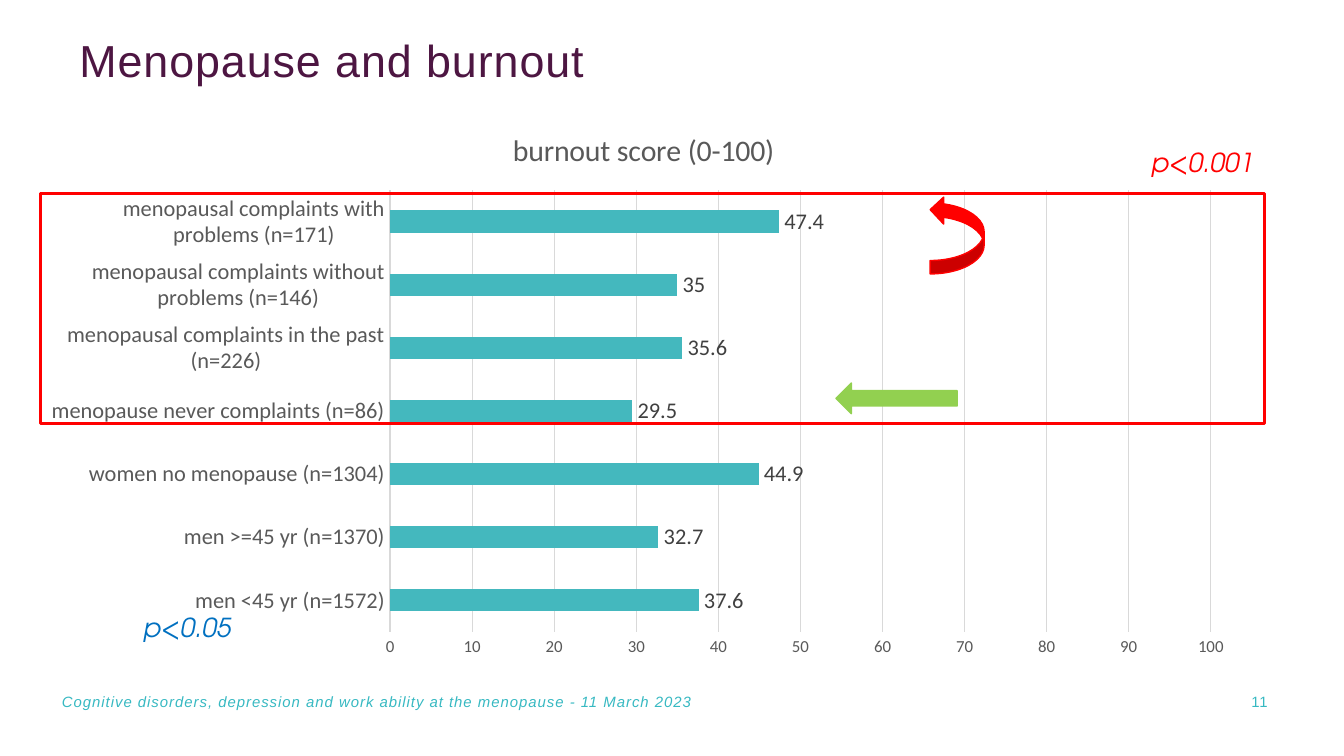
from lxml.etree import SubElement
from pptx import Presentation
from pptx.chart.data import CategoryChartData
from pptx.dml.color import RGBColor
from pptx.enum.chart import XL_CHART_TYPE as ChartType, XL_LABEL_POSITION as LabelPosition
from pptx.enum.chart import XL_TICK_MARK as TickMark
from pptx.enum.shapes import MSO_SHAPE as Shape
from pptx.enum.text import MSO_ANCHOR as Anchor, MSO_AUTO_SIZE as AutoSize, PP_ALIGN as Align
from pptx.oxml import parse_xml
from pptx.oxml.ns import nsdecls, qn
from pptx.util import Cm, Pt

PLUM = RGBColor(0x4D, 0x16, 0x42)
TEAL = RGBColor(0x37, 0xB9, 0xC2)
BAR_TEAL = RGBColor(0x44, 0xB8, 0xBE)
RED = RGBColor(0xFF, 0x00, 0x00)
GREEN = RGBColor(0x92, 0xD0, 0x50)
BLUE = RGBColor(0x00, 0x70, 0xC0)
GREY = RGBColor(0x59, 0x59, 0x59)
DARK_GREY = RGBColor(0x40, 0x40, 0x40)
GRID_GREY = RGBColor(0xD9, 0xD9, 0xD9)
BLACK = RGBColor(0x00, 0x00, 0x00)

TEXT_FONT = "Arial"
CHART_FONT = "Calibri"
P_VALUE_FONT = "TeX Gyre Adventor"

SCORE_NAME = "burnout score (0-100)"
SCORES = {
    "men <45 yr (n=1572)": 37.6,
    "men >=45 yr (n=1370)": 32.7,
    "women no menopause (n=1304)": 44.9,
    "menopause never complaints (n=86)": 29.5,
    "menopausal complaints in the past (n=226)": 35.6,
    "menopausal complaints without problems (n=146)": 35,
    "menopausal complaints with problems (n=171)": 47.4,
}


def set_font(font, name, size, color, italic=False):
    font.name = name
    font.size = Pt(size)
    font.color.rgb = color
    font.bold = False
    font.italic = italic


def set_line(line, color, width):
    line.color.rgb = color
    line.width = Pt(width)


class SlideBuilder:
    """Holds the current page and adds styled elements to it; lengths are in cm."""

    def __init__(self, page):
        self.page = page

    def add_span(self, frame, text, font, size, color, italic=False, spacing=0):
        """Add one run to the first paragraph; spacing is in hundredths of a point."""
        para = frame.paragraphs[0]
        span = para.add_run()
        span.text = text
        set_font(span.font, font, size, color, italic)
        if spacing:
            span.font._element.set("spc", str(spacing))
        return para

    def clear_insets(self, frame):
        frame.margin_left = frame.margin_right = frame.margin_top = frame.margin_bottom = 0

    def title(self, text, left, top, width, height):
        box = self.page.shapes.title
        box.left, box.top, box.width, box.height = Cm(left), Cm(top), Cm(width), Cm(height)
        frame = box.text_frame
        self.clear_insets(frame)
        frame.auto_size = AutoSize.NONE
        frame.vertical_anchor = Anchor.TOP
        para = self.add_span(frame, text, TEXT_FONT, 24, PLUM, spacing=50)
        para.alignment = Align.LEFT
        para.line_spacing = 0.8

    def text_frame(self, left, top, width, height):
        box = self.page.shapes.add_textbox(Cm(left), Cm(top), Cm(width), Cm(height))
        box.text_frame.word_wrap = True
        return box.text_frame

    def p_value(self, text, color, left, top):
        frame = self.text_frame(left, top, 2.72, 0.86)
        frame.auto_size = AutoSize.SHAPE_TO_FIT_TEXT
        self.add_span(frame, text, P_VALUE_FONT, 14, color, italic=True)

    def footer(self, text, left, width, italic=False, align=Align.LEFT, inset=True):
        frame = self.text_frame(left, 12.88, width, 0.76)
        frame.vertical_anchor = Anchor.MIDDLE
        if not inset:
            self.clear_insets(frame)
        para = self.add_span(frame, text, TEXT_FONT, 8, TEAL, italic, spacing=50)
        para.alignment = align

    def shape(self, kind, left, top, width, height, line, line_width=0.75, fill=None):
        shape = self.page.shapes.add_shape(kind, Cm(left), Cm(top), Cm(width), Cm(height))
        shape.shadow.inherit = False
        if fill is None:
            shape.fill.background()
        else:
            shape.fill.solid()
            shape.fill.fore_color.rgb = fill
        set_line(shape.line, line, line_width)
        return shape

    def bar_chart(self, name, scores, left, top, width, height):
        data = CategoryChartData()
        data.categories = list(scores)
        data.add_series(name, list(scores.values()))
        chart = self.page.shapes.add_chart(
            ChartType.BAR_CLUSTERED, Cm(left), Cm(top), Cm(width), Cm(height), data).chart
        set_font(chart.font, CHART_FONT, 10, BLACK)
        chart.has_legend = False
        chart.has_title = True
        self.add_span(chart.chart_title.text_frame, name, CHART_FONT, 16, GREY)

        categories, values = chart.category_axis, chart.value_axis
        for axis, size in ((categories, 12), (values, 9)):
            axis.major_tick_mark = axis.minor_tick_mark = TickMark.NONE
            set_font(axis.tick_labels.font, CHART_FONT, size, GREY)
        categories.has_major_gridlines = False
        set_line(categories.format.line, GRID_GREY, 0.75)
        values.minimum_scale, values.maximum_scale, values.major_unit = 0, 100, 10
        values.format.line.fill.background()
        values.has_major_gridlines = True
        set_line(values.major_gridlines.format.line, GRID_GREY, 0.75)

        plot = chart.plots[0]
        plot.gap_width = 182
        plot.vary_by_categories = False
        fill = plot.series[0].format.fill
        fill.solid()
        fill.fore_color.rgb = BAR_TEAL
        plot.has_data_labels = True
        labels = plot.data_labels
        labels.show_value = True
        labels.position = LabelPosition.OUTSIDE_END
        set_font(labels.font, CHART_FONT, 12, DARK_GREY)
        self.place_plot(chart, x=0.29, y=0.15, w=0.68, h=0.79)

    def place_plot(self, chart, **fractions):
        """Fix the inner plot area, in fractions of the chart's size."""
        area = chart.element.find(".//" + qn("c:plotArea"))
        for old in area.findall(qn("c:layout")):
            area.remove(old)
        layout = parse_xml(f"<c:layout {nsdecls('c')}><c:manualLayout/></c:layout>")
        settings = {"layoutTarget": "inner", "xMode": "edge", "yMode": "edge", **fractions}
        for tag, value in settings.items():
            SubElement(layout[0], qn("c:" + tag)).set("val", str(value))
        area.insert(0, layout)


def main():
    deck = Presentation()
    deck.slide_width, deck.slide_height = Cm(25.4), Cm(14.29)
    builder = SlideBuilder(deck.slides.add_slide(deck.slide_layouts[5]))

    builder.bar_chart(SCORE_NAME, SCORES, 0.76, 2.01, 22.81, 10.57)
    builder.title("Menopause and burnout", 1.5, 0.81, 18.75, 1.55)
    builder.footer("11", 20.02, 4.19, align=Align.RIGHT)
    builder.p_value("p<0.05", BLUE, 2.46, 11.43)
    builder.p_value("p<0.001", RED, 21.51, 2.64)
    builder.footer("Cognitive disorders, depression and work ability at the menopause - 11 March 2023",
                   1.17, 20.37, italic=True, inset=False)

    builder.shape(Shape.RECTANGLE, 0.76, 3.66, 23.14, 4.34, RED, line_width=1.5)
    rise_arrow = builder.shape(Shape.CURVED_LEFT_ARROW, 17.58, 3.71, 1.02, 1.47, RED, fill=RED)
    rise_arrow.element.spPr.find(qn("a:xfrm")).set("flipV", "1")
    builder.shape(Shape.LEFT_ARROW, 15.8, 7.24, 2.29, 0.58, GREEN, fill=GREEN)

    deck.save("out.pptx")


if __name__ == "__main__":
    main()
